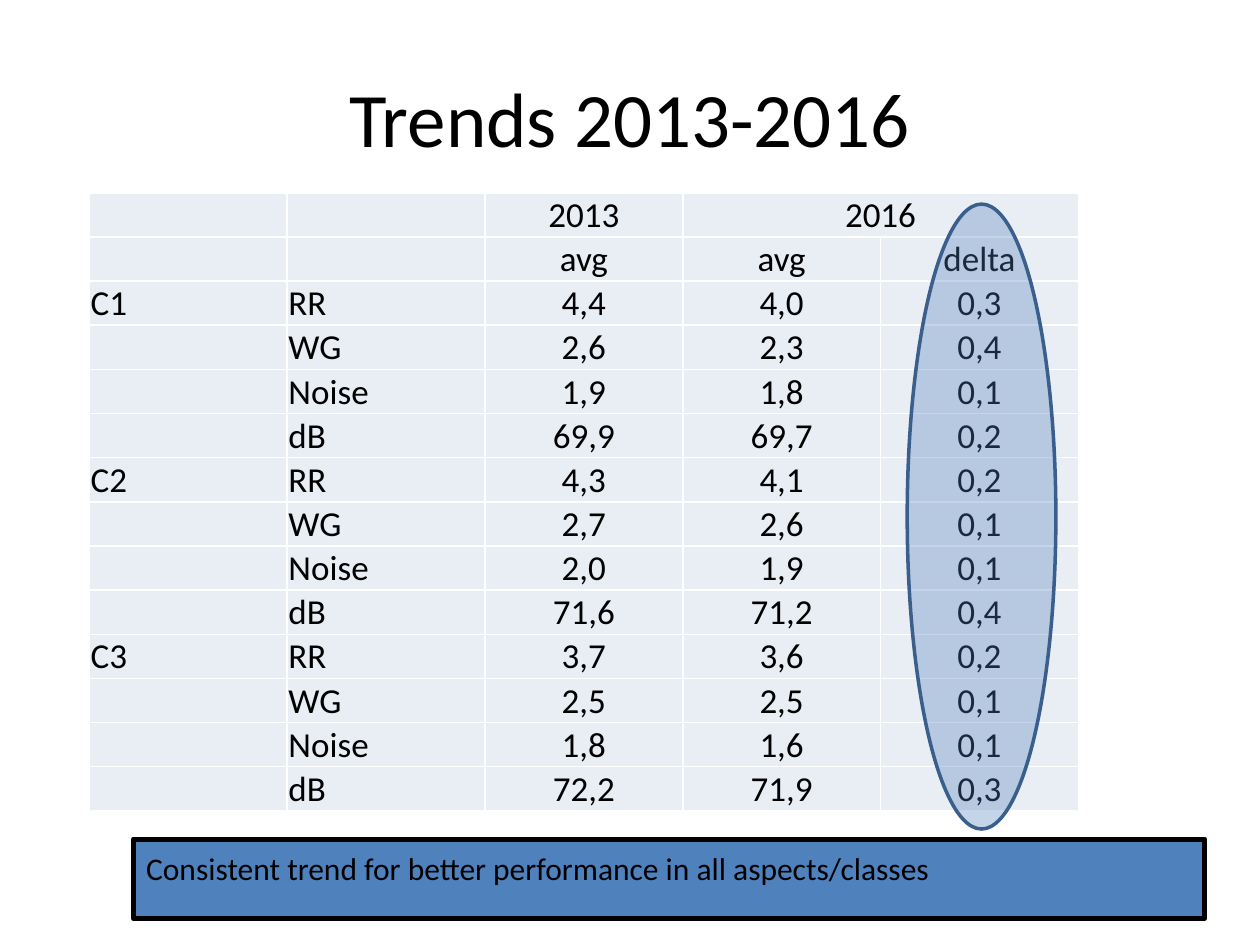
"""Build the slide on the trends from 2013 to 2016."""
import dataclasses
import typing

import lxml.etree
import pptx
import pptx.dml.color
import pptx.enum.shapes
import pptx.enum.text
import pptx.oxml.ns
import pptx.util

Inches = pptx.util.Inches
Pt = pptx.util.Pt
RGB = pptx.dml.color.RGBColor
Align = pptx.enum.text.PP_ALIGN
Anchor = pptx.enum.text.MSO_ANCHOR
qn = pptx.oxml.ns.qn


@dataclasses.dataclass(frozen=True)
class Theme:
    font: str = "Calibri"
    ink: str = "000000"
    cell: str = "E9EDF4"
    rule: str = "FFFFFF"
    blue: str = "4F81BD"
    edge: str = "3A5F8C"
    title: int = 44
    table: int = 20
    note: int = 18


@dataclasses.dataclass(frozen=True)
class Box:
    left: float
    top: float
    width: float
    height: float

    def spots(self) -> dict:
        return {key: Inches(val) for key, val in dataclasses.asdict(self).items()}


@dataclasses.dataclass(frozen=True)
class Group:
    name: str
    rows: tuple


THEME = Theme()
KINDS = ("RR", "WG", "Noise", "dB")
GROUPS = (
    Group("C1", (("4,4", "4,0", "0,3"), ("2,6", "2,3", "0,4"),
                 ("1,9", "1,8", "0,1"), ("69,9", "69,7", "0,2"))),
    Group("C2", (("4,3", "4,1", "0,2"), ("2,7", "2,6", "0,1"),
                 ("2,0", "1,9", "0,1"), ("71,6", "71,2", "0,4"))),
    Group("C3", (("3,7", "3,6", "0,2"), ("2,5", "2,5", "0,1"),
                 ("1,8", "1,6", "0,1"), ("72,2", "71,9", "0,3"))),
)
HEAD = [("", "", "2013", "2016", ""), ("", "", "avg", "avg", "delta")]
COL, ROW = 1.57, 0.33


def apply(item: typing.Any, form: dict) -> None:
    for key, val in form.items():
        setattr(item, key, val)


def write(frame: typing.Any, text: str, size: int, align: typing.Any) -> None:
    para = frame.paragraphs[0]
    para.alignment = align
    run = para.add_run()
    run.text = text
    apply(run.font, {"name": THEME.font, "size": Pt(size)})
    run.font.color.rgb = RGB.from_string(THEME.ink)


def paint(shape: typing.Any, line: str, width: float) -> None:
    shape.fill.solid()
    shape.fill.fore_color.rgb = RGB.from_string(THEME.blue)
    shape.line.color.rgb = RGB.from_string(line)
    shape.line.width = Pt(width)


def border(cell: typing.Any) -> None:
    props = cell._tc.get_or_add_tcPr()
    for spot, side in enumerate(("lnL", "lnR", "lnT", "lnB")):
        line = lxml.etree.Element(qn(f"a:{side}"), w=str(Pt(1)))
        fill = lxml.etree.SubElement(line, qn("a:solidFill"))
        lxml.etree.SubElement(fill, qn("a:srgbClr"), val=THEME.rule)
        props.insert(spot, line)


def draw_title(slide: typing.Any) -> None:
    title = slide.shapes.title
    apply(title, Box(0.5, 0.3, 9, 1.25).spots())
    title.text_frame.vertical_anchor = Anchor.MIDDLE
    write(title.text_frame, "Trends 2013-2016", THEME.title, Align.CENTER)


def draw_table(slide: typing.Any, box: Box) -> None:
    body = [(group.name if kind == KINDS[0] else "", kind, *vals)
            for group in GROUPS for kind, vals in zip(KINDS, group.rows)]
    data = HEAD + body
    grid = slide.shapes.add_table(len(data), len(data[0]), **box.spots()).table
    apply(grid, {"first_row": False, "horz_banding": False})
    for col in grid.columns:
        col.width = Inches(COL)
    for row in grid.rows:
        row.height = Inches(ROW)
    form = {"margin_left": Inches(0.01), "margin_right": Inches(0.01),
            "margin_top": Inches(0.01), "margin_bottom": 0,
            "vertical_anchor": Anchor.BOTTOM}
    for r, texts in enumerate(data):
        for c, text in enumerate(texts):
            cell = grid.cell(r, c)
            apply(cell, form)
            cell.fill.solid()
            cell.fill.fore_color.rgb = RGB.from_string(THEME.cell)
            border(cell)
            if text:
                align = Align.LEFT if c < 2 else Align.CENTER
                write(cell.text_frame, text, THEME.table, align)
    grid.cell(0, 3).merge(grid.cell(0, 4))


def draw_note(slide: typing.Any, box: Box) -> None:
    note = slide.placeholders[1]
    apply(note, box.spots())
    paint(note, THEME.ink, 3)
    frame = note.text_frame
    apply(frame, {"auto_size": pptx.enum.text.MSO_AUTO_SIZE.NONE,
                  "vertical_anchor": Anchor.TOP,
                  "margin_left": Inches(0.1), "margin_right": Inches(0.1),
                  "margin_top": Inches(0.08), "margin_bottom": Inches(0.08)})
    write(frame, "Consistent trend for better performance in all aspects/classes",
          THEME.note, Align.LEFT)
    props = frame.paragraphs[0]._p.get_or_add_pPr()
    for key in ("marL", "indent"):
        props.set(key, "0")
    lxml.etree.SubElement(props, qn("a:buNone"))


def draw_ring(slide: typing.Any, box: Box) -> None:
    oval = pptx.enum.shapes.MSO_SHAPE.OVAL
    ring = slide.shapes.add_shape(oval, **box.spots())
    ring.shadow.inherit = False
    paint(ring, THEME.edge, 2)
    tint = ring.fill._xPr.find(qn("a:solidFill"))[0]
    lxml.etree.SubElement(tint, qn("a:alpha"), val="33000")


def main() -> None:
    deck = pptx.Presentation()
    apply(deck, {"slide_width": Inches(10), "slide_height": Inches(7.5)})
    slide = deck.slides.add_slide(deck.slide_layouts[1])
    draw_title(slide)
    draw_table(slide, Box(0.71, 1.53, 7.84, 4.81))
    draw_note(slide, Box(1.06, 6.66, 8.5, 0.63))
    draw_ring(slide, Box(7.2, 1.62, 1.18, 4.96))
    deck.save("out.pptx")


if __name__ == "__main__":
    main()
